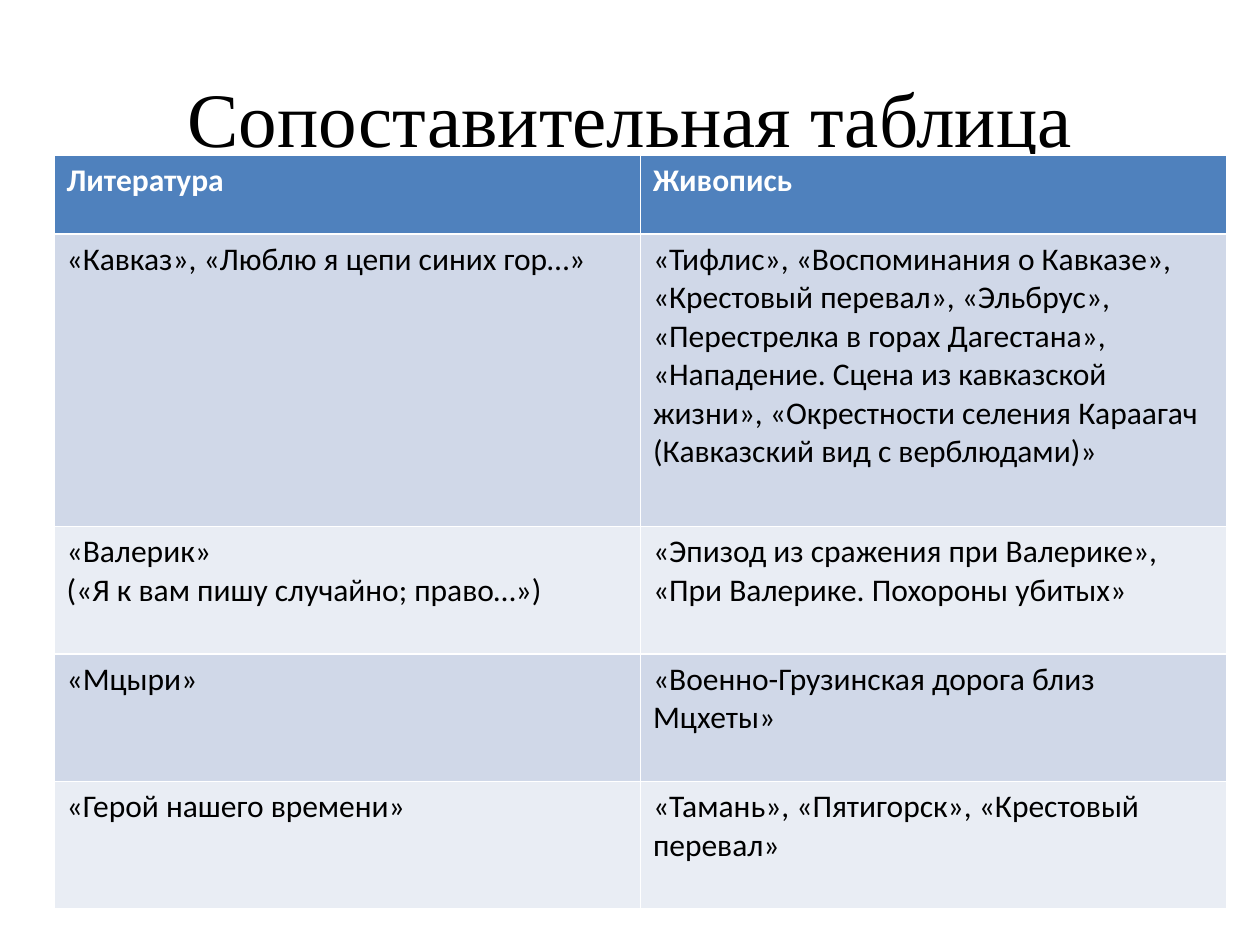
from dataclasses import dataclass

from pptx import Presentation
from pptx.dml.color import RGBColor
from pptx.enum.text import MSO_ANCHOR, PP_ALIGN
from pptx.util import Cm, Pt

TITLE = "Сопоставительная таблица"
HEAD = (["Литература"], ["Живопись"])
BODY = [
    (["«Кавказ», «Люблю я цепи синих гор…»"],
     ["«Тифлис», «Воспоминания о Кавказе», «Крестовый перевал», «Эльбрус», "
      "«Перестрелка в горах Дагестана», «Нападение. Сцена из кавказской жизни», "
      "«Окрестности селения Караагач",
      "(Кавказский вид с верблюдами)»"]),
    (["«Валерик»", "(«Я к вам пишу случайно; право…»)"],
     ["«Эпизод из сражения при Валерике»,", "«При Валерике. Похороны убитых»"]),
    (["«Мцыри»"], ["«Военно-Грузинская дорога близ Мцхеты»"]),
    (["«Герой нашего времени»"], ["«Тамань», «Пятигорск», «Крестовый перевал»"]),
]
TALL = [1.6, 5.89, 2.57, 2.57, 2.57]
WIDE = 11.82


@dataclass(frozen=True)
class Theme:
    serif: str = "Times New Roman"
    sans: str = "Calibri"
    big: int = 44
    text: int = 18
    ink: str = "000000"
    light: str = "FFFFFF"
    head: str = "4F81BD"
    bands: tuple = ("D0D8E8", "E9EDF4")


LOOK = Theme()


def write(frame, lines, font, size, color, bold=False, align=PP_ALIGN.LEFT):
    for num, line in enumerate(lines):
        para = frame.add_paragraph() if num else frame.paragraphs[0]
        para.alignment = align
        run = para.add_run()
        run.text = line
        run.font.name = font
        run.font.size = Pt(size)
        run.font.bold = bold
        run.font.color.rgb = RGBColor.from_string(color)


def add_title(slide):
    box = slide.shapes.add_textbox(Cm(1.27), Cm(0.76), Cm(22.86), Cm(3.18))
    frame = box.text_frame
    frame.word_wrap = True
    frame.vertical_anchor = MSO_ANCHOR.MIDDLE
    write(frame, [TITLE], LOOK.serif, LOOK.big, LOOK.ink, align=PP_ALIGN.CENTER)


def add_grid(slide):
    rows = [HEAD, *BODY]
    grid = slide.shapes.add_table(len(rows), len(HEAD), Cm(1.09), Cm(3.12),
                                  Cm(WIDE * len(HEAD)), Cm(sum(TALL))).table
    for col in grid.columns:
        col.width = Cm(WIDE)
    for num, (row, tall) in enumerate(zip(rows, TALL)):
        grid.rows[num].height = Cm(tall)
        top = num == 0
        fill = LOOK.head if top else LOOK.bands[(num - 1) % 2]
        for cell, lines in zip(grid.rows[num].cells, row):
            cell.fill.solid()
            cell.fill.fore_color.rgb = RGBColor.from_string(fill)
            write(cell.text_frame, lines, LOOK.sans, LOOK.text,
                  LOOK.light if top else LOOK.ink, top)


def main():
    deck = Presentation()
    deck.slide_width, deck.slide_height = Cm(25.4), Cm(19.05)
    slide = deck.slides.add_slide(deck.slide_layouts[6])
    add_title(slide)
    add_grid(slide)
    deck.save("out.pptx")


if __name__ == "__main__":
    main()
